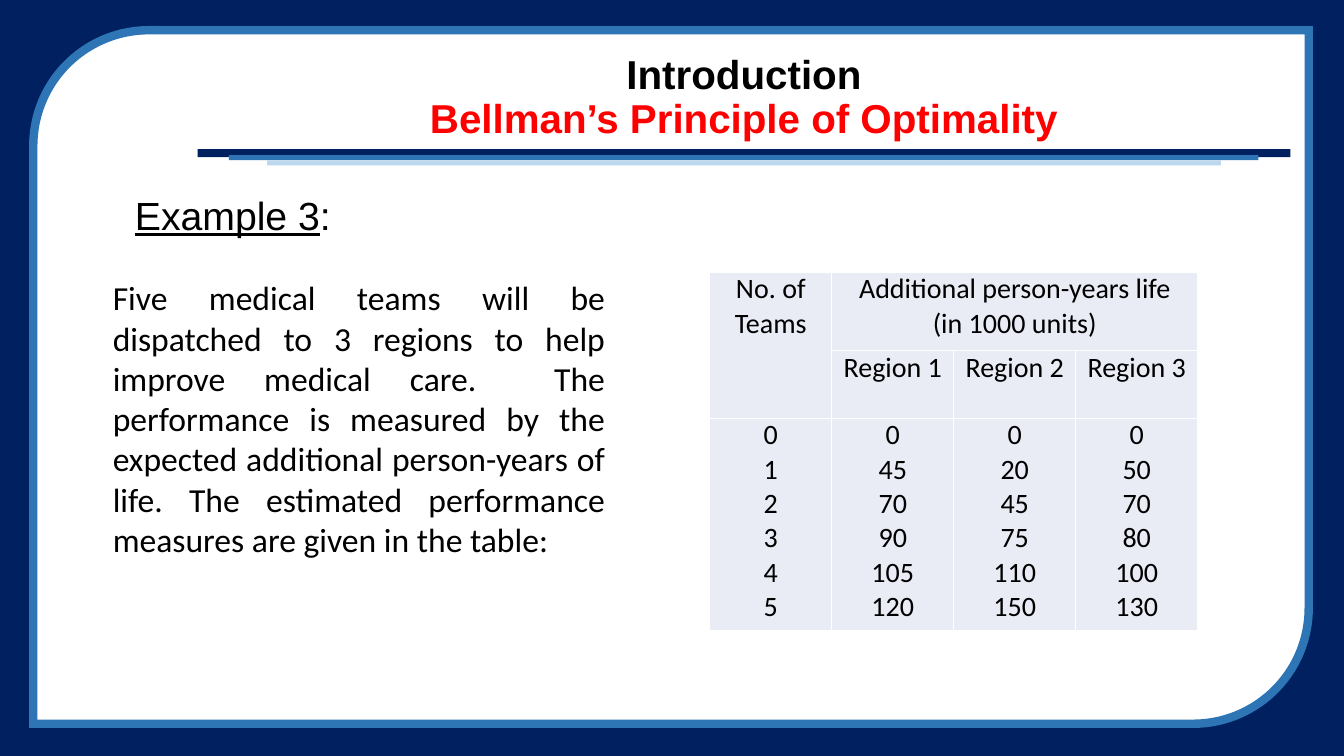
from dataclasses import dataclass

from lxml.etree import SubElement
from pptx import Presentation
from pptx.dml.color import RGBColor
from pptx.enum.shapes import MSO_SHAPE
from pptx.enum.text import MSO_ANCHOR, MSO_AUTO_SIZE, PP_ALIGN
from pptx.oxml.ns import qn
from pptx.shapes.autoshape import Shape
from pptx.slide import Slide
from pptx.table import _Cell
from pptx.text.text import _Run
from pptx.util import Inches, Pt


@dataclass(frozen=True)
class Theme:
    navy: str = "002060"
    blue: str = "2E75B6"
    pale_blue: str = "BDD7EE"
    white: str = "FFFFFF"
    black: str = "000000"
    red: str = "FF0000"
    cell: str = "E9EBF5"
    heading_font: str = "Arial"
    body_font: str = "Calibri"
    title_size: float = 28.8
    example_size: float = 28
    body_size: float = 24
    table_size: float = 20


@dataclass(frozen=True)
class Panel:
    left: float
    top: float
    width: float
    height: float
    fill: str
    kind: MSO_SHAPE = MSO_SHAPE.RECTANGLE


@dataclass(frozen=True)
class TableCell:
    row: int
    column: int
    text: str
    row_span: int = 1
    column_span: int = 1


THEME = Theme()
BACKDROP = Panel(0, 0, 13.33, 7.5, THEME.navy)
FRAME = Panel(0.33, 0.3, 12.65, 6.88, THEME.white, MSO_SHAPE.ROUND_2_DIAG_RECTANGLE)
TITLE_BARS = [
    Panel(1.96, 1.48, 10.84, 0.08, THEME.navy),
    Panel(2.27, 1.54, 10.21, 0.05, THEME.blue),
    Panel(2.65, 1.59, 9.46, 0.05, THEME.pale_blue),
]
PROBLEM = (
    "Five medical teams will be dispatched to 3 regions to help improve medical care.  "
    "The performance is measured by the expected additional person-years of life. "
    "The estimated performance measures are given in the table:"
)
REGIONS = {
    "Region 1": [0, 45, 70, 90, 105, 120],
    "Region 2": [0, 20, 45, 75, 110, 150],
    "Region 3": [0, 50, 70, 80, 100, 130],
}
ROW_HEIGHTS = [0.78, 0.67, 2.11]
COLUMN_WIDTH = 1.21


def style_run(span: _Run, size: float, font: str, colour: str = THEME.black) -> None:
    span.font.size = Pt(size)
    span.font.name = font
    span.font.color.rgb = RGBColor.from_string(colour)


def draw_panel(page: Slide, panel: Panel) -> Shape:
    shape = page.shapes.add_shape(
        panel.kind, Inches(panel.left), Inches(panel.top), Inches(panel.width), Inches(panel.height)
    )
    shape.shadow.inherit = False
    shape.fill.solid()
    shape.fill.fore_color.rgb = RGBColor.from_string(panel.fill)
    shape.line.fill.background()
    return shape


def draw_frame(page: Slide) -> None:
    frame = draw_panel(page, FRAME)
    frame.line.color.rgb = RGBColor.from_string(THEME.blue)
    frame.line.width = Pt(6)
    SubElement(frame.line._get_or_add_ln(), qn("a:miter"), lim="800000")


def write_title(page: Slide) -> None:
    title = page.shapes.title
    title.element.getparent().append(title.element)
    title.left, title.top = Inches(1.96), Inches(0.49)
    title.width, title.height = Inches(10.84), Inches(0.97)
    frame = title.text_frame
    frame.text = "Introduction\nBellman’s Principle of Optimality"
    frame.auto_size = MSO_AUTO_SIZE.NONE
    frame.vertical_anchor = MSO_ANCHOR.MIDDLE
    for para, colour in zip(frame.paragraphs, (THEME.black, THEME.red)):
        para.alignment = PP_ALIGN.CENTER
        para.line_spacing = 0.9
        span = para.runs[0]
        style_run(span, THEME.title_size, THEME.heading_font, colour)
        span.font.bold = True


def add_text_box(page: Slide, left: float, top: float, width: float, height: float) -> Shape:
    box = page.shapes.add_textbox(Inches(left), Inches(top), Inches(width), Inches(height))
    box.text_frame.word_wrap = True
    box.text_frame.paragraphs[0].alignment = PP_ALIGN.JUSTIFY
    return box


def write_example(page: Slide) -> None:
    box = add_text_box(page, 1.24, 1.9, 11.34, 0.6)
    para = box.text_frame.paragraphs[0]
    para.line_spacing = 0.9
    for text, underlined in (("Example 3", True), (":", False)):
        span = para.add_run()
        span.text = text
        style_run(span, THEME.example_size, THEME.heading_font)
        span.font.underline = underlined


def write_problem(page: Slide) -> None:
    box = add_text_box(page, 1.02, 2.7, 5.08, 3.23)
    box.text_frame.auto_size = MSO_AUTO_SIZE.SHAPE_TO_FIT_TEXT
    para = box.text_frame.paragraphs[0]
    para.text = PROBLEM
    style_run(para.runs[0], THEME.body_size, THEME.body_font)


def style_cell(cell: _Cell) -> None:
    cell.margin_left = cell.margin_right = Inches(0.07)
    cell.margin_top = cell.margin_bottom = 0
    properties = cell._tc.get_or_add_tcPr()
    for side in ("lnL", "lnR", "lnT", "lnB"):
        border = SubElement(properties, qn(f"a:{side}"), w=str(Pt(1)))
        SubElement(SubElement(border, qn("a:solidFill")), qn("a:srgbClr"), val=THEME.white)
    cell.fill.solid()
    cell.fill.fore_color.rgb = RGBColor.from_string(THEME.cell)


def table_cells() -> list[TableCell]:
    cells = [
        TableCell(0, 0, "No. of Teams", row_span=2),
        TableCell(0, 1, "Additional person-years life\n(in 1000 units)", column_span=3),
        TableCell(2, 0, "\n".join(map(str, range(6)))),
    ]
    for column, (region, values) in enumerate(REGIONS.items(), start=1):
        cells.append(TableCell(1, column, region))
        cells.append(TableCell(2, column, "\n".join(map(str, values))))
    return cells


def draw_table(page: Slide) -> None:
    column_count = len(REGIONS) + 1
    table = page.shapes.add_table(
        len(ROW_HEIGHTS), column_count, Inches(7.04), Inches(2.7),
        Inches(COLUMN_WIDTH * column_count), Inches(sum(ROW_HEIGHTS)),
    ).table
    table.first_row = table.horz_banding = False
    for column in table.columns:
        column.width = Inches(COLUMN_WIDTH)
    for row, height in zip(table.rows, ROW_HEIGHTS):
        row.height = Inches(height)
    for cell in table.iter_cells():
        style_cell(cell)
    for item in table_cells():
        cell = table.cell(item.row, item.column)
        if item.row_span * item.column_span > 1:
            cell.merge(table.cell(item.row + item.row_span - 1, item.column + item.column_span - 1))
        cell.text_frame.text = item.text
        for para in cell.text_frame.paragraphs:
            para.alignment = PP_ALIGN.CENTER
            style_run(para.runs[0], THEME.table_size, THEME.body_font)


def main() -> None:
    deck = Presentation()
    deck.slide_width, deck.slide_height = Inches(13.33), Inches(7.5)
    page = deck.slides.add_slide(deck.slide_layouts[5])
    draw_panel(page, BACKDROP)
    draw_frame(page)
    for bar in TITLE_BARS:
        draw_panel(page, bar)
    write_title(page)
    write_example(page)
    write_problem(page)
    draw_table(page)
    deck.save("out.pptx")


if __name__ == "__main__":
    main()
